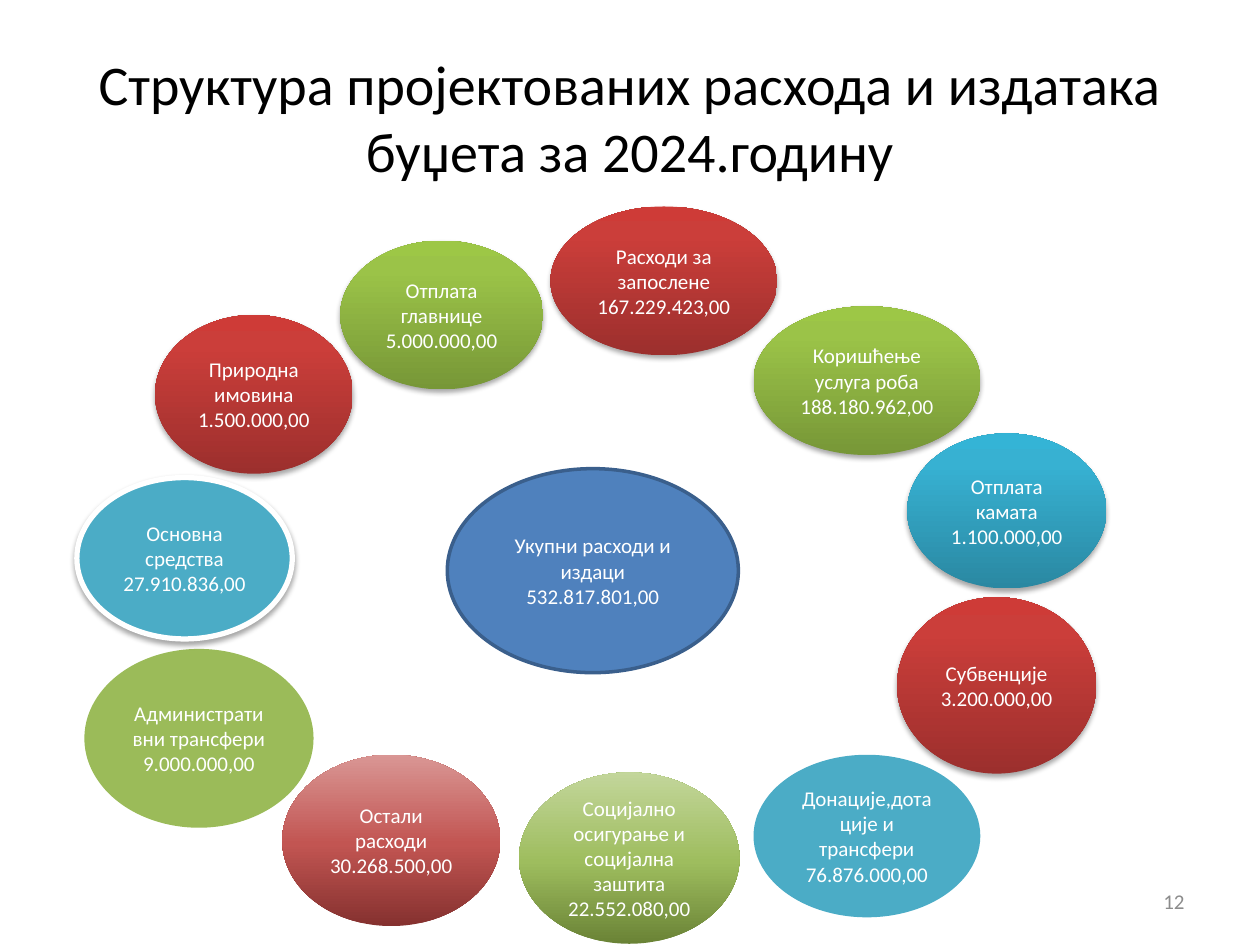
from dataclasses import dataclass

from lxml import etree
from pptx import Presentation
from pptx.dml.color import RGBColor
from pptx.enum import shapes, text
from pptx.oxml import ns
from pptx.util import Pt


@dataclass(frozen=True)
class Theme:
    font: str = "Calibri"
    title_size: int = 32
    body_size: int = 12
    title: str = "000000"
    number: str = "8C8C8C"
    white: str = "FFFFFF"
    blue: str = "4F81BD"
    blue_edge: str = "3A5F8C"
    aqua: str = "4BACC6"
    green: str = "9BBB59"
    # Gradients run from bottom to top: (position in percent, colour)
    deep_red: tuple = ((0, "9C2F2D"), (80, "CB3E3A"), (100, "CE3B37"))
    deep_green: tuple = ((0, "779737"), (80, "9BC348"), (100, "9DC746"))
    deep_aqua: tuple = ((0, "2A88A2"), (80, "37B1D2"), (100, "34B4D6"))
    pale_red: tuple = ((0, "85312F"), (48, "C25552"), (100, "D99694"))
    pale_green: tuple = ((0, "6A8336"), (48, "9EBD5E"), (100, "C3D69B"))


THEME = Theme()

TOTAL = ((255.6, 267.8, 166.3, 116.6), ("Укупни расходи и издаци", "532.817.801,00"))

# Box in points, fill, shadow, paragraphs
EXPENSES = [
    ((194.4, 137.5, 115.9, 85), THEME.deep_green, True, ("Отплата главнице", "5.000.000,00")),
    ((314.6, 118, 129.6, 85), THEME.deep_red, True, ("Расходи за запослене", "167.229.423,00")),
    ((430.6, 175, 129.6, 85), THEME.deep_green, True, ("Коришћење услуга роба", "188.180.962,00")),
    ((518.4, 247.7, 113.8, 88.6), THEME.deep_aqua, True, ("Отплата камата", "1.100.000,00")),
    ((512.6, 341.3, 113.8, 100.8), THEME.deep_red, True, ("Субвенције 3.200.000,00",)),
    ((430.6, 431.3, 129.6, 92.9), THEME.aqua, False,
     ("Донације,дотације и трансфери", "76.876.000,00")),
    ((296.6, 441.4, 126, 97.9), THEME.pale_green, False,
     ("Социјално осигурање и социјална заштита", "22.552.080,00")),
    ((161.3, 431.3, 124.6, 97.9), THEME.pale_red, False, ("Остали расходи", "30.268.500,00")),
    ((48.2, 370.8, 131, 102.2), THEME.green, False, ("Административни трансфери", "9.000.000,00")),
    ((43.9, 272.9, 123.1, 92.2), THEME.aqua, True, ("Основна средства", "27.910.836,00")),
    ((88.6, 180, 113, 90.7), THEME.deep_red, True, ("Природна имовина", "1.500.000,00")),
]
WHITE_EDGED = "Основна средства"


def write(shape, paragraphs, size, color, align):
    frame = shape.text_frame
    frame.word_wrap = True
    frame.vertical_anchor = text.MSO_ANCHOR.MIDDLE
    frame.text = "\n".join(paragraphs)
    for paragraph in frame.paragraphs:
        paragraph.alignment = align
        paragraph.font.name = THEME.font
        paragraph.font.size = Pt(size)
        paragraph.font.color.rgb = RGBColor.from_string(color)


def add_text(slide, box, wording, size, color, align):
    write(slide.shapes.add_textbox(*map(Pt, box)), [wording], size, color, align)


def add_color(parent, color):
    return etree.SubElement(parent, ns.qn("a:srgbClr"), val=color)


def fill_gradient(shape, stops):
    shape.fill.gradient()
    shape.fill.gradient_angle = 90
    stop_list = shape._element.spPr.find(".//" + ns.qn("a:gsLst"))
    for stop in list(stop_list):
        stop_list.remove(stop)
    for position, color in stops:
        add_color(etree.SubElement(stop_list, ns.qn("a:gs"), pos=str(position * 1000)), color)


def drop_shadow(shape):
    effects = shape._element.spPr.find(ns.qn("a:effectLst"))
    shadow = etree.SubElement(
        effects, ns.qn("a:outerShdw"), blurRad=str(Pt(3.1)), dist=str(Pt(1.8)),
        dir="5400000", rotWithShape="0")
    etree.SubElement(add_color(shadow, "000000"), ns.qn("a:alpha"), val="35000")


def add_bubble(slide, box, fill, paragraphs, edge=None, edge_width=0, shadow=False):
    bubble = slide.shapes.add_shape(shapes.MSO_SHAPE.OVAL, *map(Pt, box))
    if isinstance(fill, str):
        bubble.fill.solid()
        bubble.fill.fore_color.rgb = RGBColor.from_string(fill)
    else:
        fill_gradient(bubble, fill)
    if edge:
        bubble.line.color.rgb = RGBColor.from_string(edge)
        bubble.line.width = Pt(edge_width)
    else:
        bubble.line.fill.background()
    bubble.shadow.inherit = False
    if shadow:
        drop_shadow(bubble)
    write(bubble, paragraphs, THEME.body_size, THEME.white, text.PP_ALIGN.CENTER)


def add_expense_ring(slide):
    box, paragraphs = TOTAL
    add_bubble(slide, box, THEME.blue, paragraphs, THEME.blue_edge, 2)
    for box, fill, shadow, paragraphs in EXPENSES:
        edge = THEME.white if paragraphs[0] == WHITE_EDGED else None
        add_bubble(slide, box, fill, paragraphs, edge, 3, shadow)


def main():
    deck = Presentation()
    deck.slide_width, deck.slide_height = Pt(720), Pt(540)
    slide = deck.slides.add_slide(deck.slide_layouts[6])
    add_text(slide, (36, 21.6, 648, 90),
             "Структура пројектованих расхода и издатака буџета за 2024.годину",
             THEME.title_size, THEME.title, text.PP_ALIGN.CENTER)
    add_text(slide, (516, 500.5, 168, 28.8), "12",
             THEME.body_size, THEME.number, text.PP_ALIGN.RIGHT)
    add_expense_ring(slide)
    deck.save("out.pptx")


if __name__ == "__main__":
    main()
